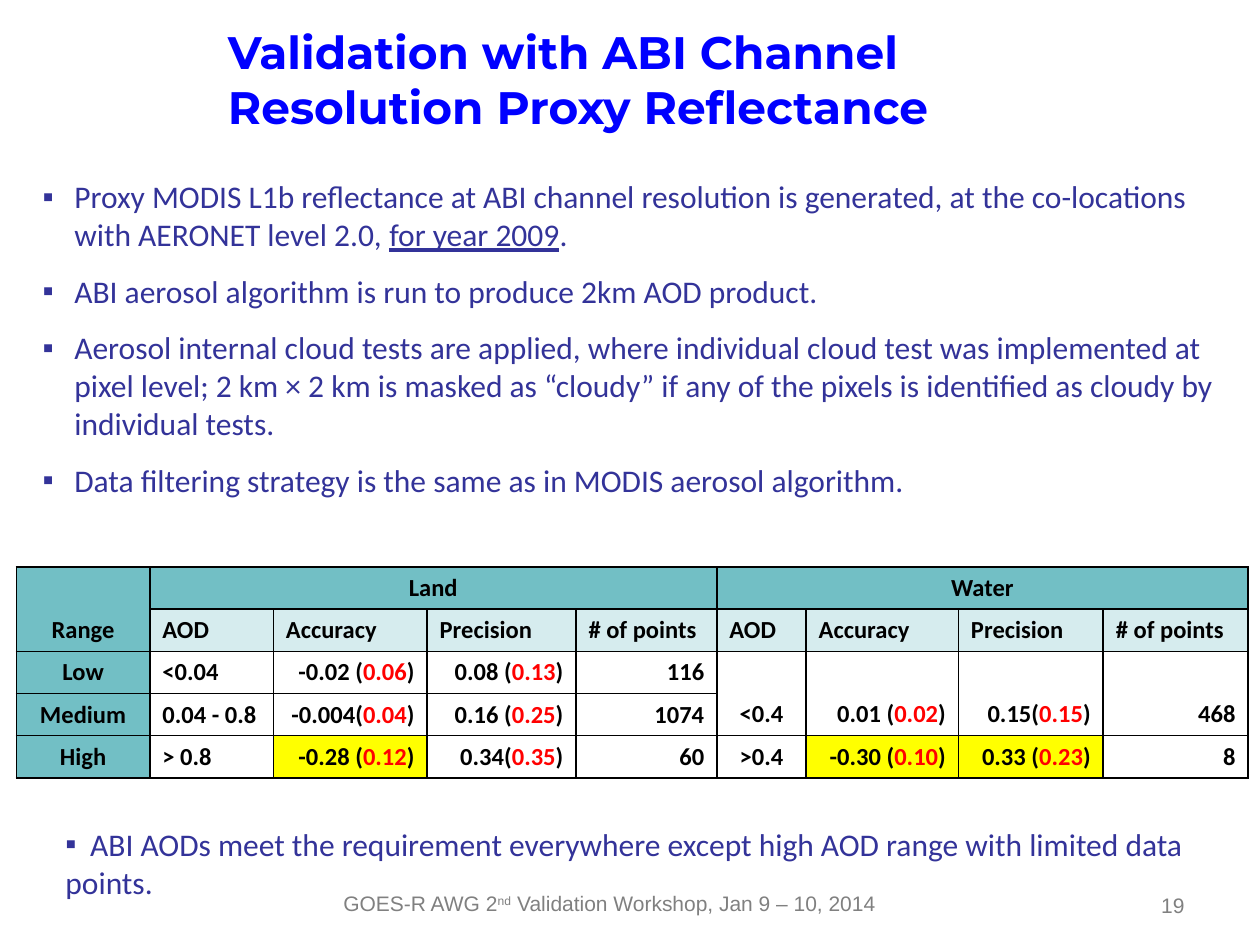
import lxml.etree
import pptx
import pptx.dml.color
import pptx.enum.text
import pptx.oxml.ns
import pptx.util
from pptx.util import Cm

COLORS = {
    "title": "0000FF",
    "body": "333399",
    "foot": "808080",
    "text": "000000",
    "goal": "FF0000",
    "dark": "72BFC5",
    "pale": "D6ECEE",
    "plain": "FFFFFF",
    "alert": "FFFF00",
}
ALIGN = pptx.enum.text.PP_ALIGN
ANCHOR = pptx.enum.text.MSO_ANCHOR

POINTS = [
    [
        "Proxy MODIS L1b reflectance at ABI channel resolution is generated, "
        "at the co-locations with AERONET level 2.0, ",
        ("for year 2009", {"line": True}),
        ".",
    ],
    ["ABI aerosol algorithm is run to produce 2km AOD product."],
    [
        "Aerosol internal cloud tests are applied, where individual cloud test "
        "was implemented at pixel level; 2 km × 2 km is masked as “cloudy” if any "
        "of the pixels is identified as cloudy by individual tests."
    ],
    ["Data filtering strategy is the same as in MODIS aerosol algorithm."],
]
HEADS = ["AOD", "Accuracy", "Precision", "# of points"]
ROWS = [
    ["Range", "Land", "", "", "", "Water", "", "", ""],
    [""] + HEADS * 2,
    ["Low", "<0.04", "-0.02 (0.06)", "0.08 (0.13)", "116",
     "<0.4", "0.01 (0.02)", "0.15(0.15)", "468"],
    ["Medium", "0.04 - 0.8", "-0.004(0.04)", "0.16 (0.25)", "1074", "", "", "", ""],
    ["High", "> 0.8", "-0.28 (0.12)", "0.34(0.35)", "60",
     ">0.4", "-0.30 (0.10)", "0.33 (0.23)", "8"],
]
WIDTHS = [2.69, 2.49, 3.1, 3, 2.84, 1.8, 3.07, 2.92, 2.92]
SPANS = [(0, 0, 1, 0), (0, 1, 0, 4), (0, 5, 0, 8)]
SPANS += [(2, col, 3, col) for col in range(5, 9)]
ALERTS = [(4, 2), (4, 6), (4, 7)]


def tint(name):
    return pptx.dml.color.RGBColor.from_string(COLORS[name])


def add_node(parent, tag, **attrs):
    return lxml.etree.SubElement(parent, pptx.oxml.ns.qn(tag), attrs)


def add_bullet(para, indent, tab):
    props = para._p.get_or_add_pPr()
    props.set("marL", str(Cm(indent)))
    props.set("indent", str(-Cm(indent)))
    add_node(props, "a:buFont", typeface="Arial")
    add_node(props, "a:buChar", char="▪")
    if tab:
        stops = add_node(props, "a:tabLst")
        add_node(stops, "a:tab", pos=str(Cm(tab)), algn="l")


def write(frame, paras, size=18, font="Calibri", color="body", bold=False,
          align=ALIGN.LEFT, bullet=False, indent=0, tab=0, gap=0):
    for num, runs in enumerate(paras):
        para = frame.add_paragraph() if num else frame.paragraphs[0]
        para.alignment = align
        para.space_before = pptx.util.Pt(gap if num else 0)
        if bullet:
            add_bullet(para, indent, tab)
        for item in runs:
            text, style = (item, {}) if isinstance(item, str) else item
            run = para.add_run()
            run.text = text
            run.font.size = pptx.util.Pt(size)
            run.font.name = font
            run.font.bold = bold
            run.font.color.rgb = tint(style.get("color", color))
            if style.get("line"):
                run.font.underline = True
            if style.get("raised"):
                run._r.get_or_add_rPr().set("baseline", "30000")


def add_title(slide, text):
    title = slide.shapes.title
    title.left, title.top, title.width, title.height = Cm(4.34), 0, Cm(15.8), Cm(3.18)
    frame = title.text_frame
    frame.word_wrap = True
    frame.auto_size = pptx.enum.text.MSO_AUTO_SIZE.NONE
    frame.vertical_anchor = ANCHOR.MIDDLE
    write(frame, [[text]], size=26, font="Montserrat", color="title", bold=True)


def add_text(slide, left, top, width, height, paras, anchor=ANCHOR.TOP, **style):
    box = slide.shapes.add_textbox(Cm(left), Cm(top), Cm(width), Cm(height))
    box.text_frame.word_wrap = True
    box.text_frame.vertical_anchor = anchor
    write(box.text_frame, paras, **style)


def add_edges(cell):
    props = cell._tc.get_or_add_tcPr()
    for tag in ("a:lnL", "a:lnR", "a:lnT", "a:lnB"):
        edge = add_node(props, tag, w=str(pptx.util.Pt(1)))
        fill = add_node(edge, "a:solidFill")
        add_node(fill, "a:srgbClr", val=COLORS["text"])


def pick_fill(row, col):
    if row == 0 or col == 0:
        return "dark"
    if row == 1:
        return "pale"
    return "alert" if (row, col) in ALERTS else "plain"


def pick_align(row, col):
    if row == 0 or col == 0:
        return ALIGN.CENTER
    if row == 1 or col == 1:
        return ALIGN.LEFT
    return ALIGN.CENTER if col == 5 else ALIGN.RIGHT


def split_goal(text):
    value, mark, goal = text.partition("(")
    if not mark:
        return [text]
    return [value + mark, (goal[:-1], {"color": "goal"}), ")"]


def add_grid(slide):
    high = 0.85
    table = slide.shapes.add_table(
        len(ROWS), len(WIDTHS), Cm(0.33), Cm(11.43),
        Cm(sum(WIDTHS)), Cm(high * len(ROWS))).table
    table.first_row = table.horz_banding = False
    for column, width in zip(table.columns, WIDTHS):
        column.width = Cm(width)
    for top, left, low, right in SPANS:
        table.cell(top, left).merge(table.cell(low, right))
    for row, texts in enumerate(ROWS):
        table.rows[row].height = Cm(high)
        for col, text in enumerate(texts):
            cell = table.cell(row, col)
            add_edges(cell)
            cell.fill.solid()
            cell.fill.fore_color.rgb = tint(pick_fill(row, col))
            cell.vertical_anchor = ANCHOR.BOTTOM
            write(cell.text_frame, [split_goal(text)], size=14, color="text",
                  bold=True, align=pick_align(row, col))


def main():
    deck = pptx.Presentation()
    deck.slide_width, deck.slide_height = Cm(25.4), Cm(19.05)
    slide = deck.slides.add_slide(deck.slide_layouts[5])
    add_title(slide, "Validation with ABI Channel Resolution Proxy Reflectance")
    add_text(slide, 0.61, 3.45, 24.64, 6.81, POINTS,
             bullet=True, indent=0.64, gap=10.8)
    add_grid(slide)
    result = ("\tABI AODs meet the requirement everywhere except high AOD range "
              "with limited data points.")
    add_text(slide, 1.07, 16.51, 23.5, 1.8, [[result]], bullet=True, tab=0.5)
    foot = {"size": 12, "font": "Arial", "color": "foot"}
    add_text(slide, 18.21, 17.83, 5.92, 0.84, [["19"]],
             anchor=ANCHOR.MIDDLE, align=ALIGN.RIGHT, **foot)
    event = ["GOES-R AWG 2", ("nd", {"raised": True}),
             " Validation Workshop, Jan 9 – 10, 2014"]
    add_text(slide, 6.55, 17.83, 11.48, 0.84, [event], align=ALIGN.CENTER, **foot)
    deck.save("out.pptx")


if __name__ == "__main__":
    main()
